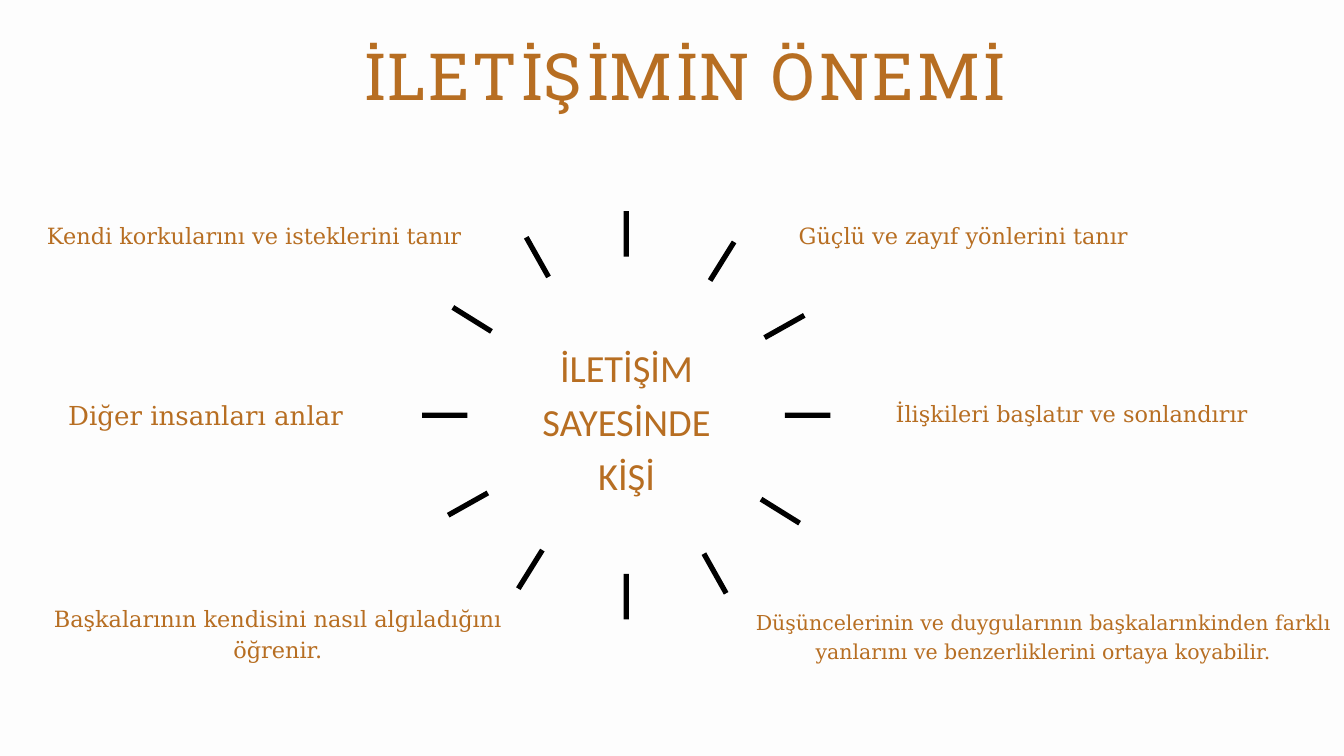
from dataclasses import dataclass
from itertools import product
from math import cos, radians, sin

from pptx import Presentation
from pptx.dml.color import RGBColor
from pptx.enum import shapes, text
from pptx.slide import Slide
from pptx.util import Cm, Pt

PAPER = RGBColor(0xFD, 0xFD, 0xFD)
COPPER = RGBColor(0xB7, 0x6E, 0x22)
BLACK = RGBColor(0x00, 0x00, 0x00)

# Ring of rays, in centimetres and degrees
CENTER_X, CENTER_Y, RADIUS = 23.67, 15.7, 6.86
RAY_LENGTH, RAY_THICKNESS = 1.72, 0.2
QUADRANTS = (0, 90, 180, 270)
RAY_ANGLES = (0, 31.9, 60.7)


@dataclass(frozen=True)
class Label:
    """A centred text; box in centimetres, sizes in points."""
    wording: str
    left: float
    top: float
    width: float
    height: float
    size: float = 24
    line_height: float = 33.6
    font: str = "DejaVu Serif"
    tracking: float = 0


TITLE = Label("İLETİŞİMİN ÖNEMİ", 11.63, 1.85, 28.45, 2.54,
              69.7, 69.7, "Roboto Slab", 2.9)
CORE = Label("İLETİŞİM SAYESİNDE KİŞİ", 19.38, 12.73, 8.61, 5.89,
             41.1, 57.6, "Calibri")
BENEFITS = (
    Label("Düşüncelerinin ve duygularının başkalarınkinden farklı yanlarını "
          "ve benzerliklerini ortaya koyabilir.",
          27.53, 22.91, 23.8, 2.16, 22, 30.8),
    Label("Kendi korkularını ve isteklerini tanır", 0.81, 8.23, 17.6, 1.17),
    Label("Güçlü ve zayıf yönlerini tanır", 19.53, 8.23, 33.76, 1.17),
    Label("İlişkileri başlatır ve sonlandırır", 33.07, 14.94, 14.88, 1.17),
    Label("Başkalarının kendisini nasıl algıladığını öğrenir.",
          0.81, 22.71, 19.38, 2.36),
    Label("Diğer insanları anlar", 1.98, 14.91, 11.58, 1.4, 28, 39.2),
)


def add_label(slide: Slide, label: Label) -> None:
    box = slide.shapes.add_textbox(Cm(label.left), Cm(label.top),
                                   Cm(label.width), Cm(label.height))
    frame = box.text_frame
    frame.word_wrap = True
    frame.auto_size = text.MSO_AUTO_SIZE.SHAPE_TO_FIT_TEXT
    frame.margin_left = frame.margin_right = Cm(0)
    frame.margin_top = frame.margin_bottom = Cm(0)
    paragraph = frame.paragraphs[0]
    paragraph.alignment = text.PP_ALIGN.CENTER
    paragraph.line_spacing = Pt(label.line_height)
    paragraph.font.name = label.font
    paragraph.font.size = Pt(label.size)
    paragraph.font.color.rgb = COPPER
    run = paragraph.add_run()
    run.text = label.wording
    if label.tracking:
        run._r.get_or_add_rPr().set("spc", str(round(label.tracking * 100)))


def add_ray(slide: Slide, angle: float) -> None:
    x = CENTER_X + RADIUS * cos(radians(angle))
    y = CENTER_Y + RADIUS * sin(radians(angle))
    ray = slide.shapes.add_shape(
        shapes.MSO_SHAPE.RECTANGLE,
        Cm(x - RAY_LENGTH / 2), Cm(y - RAY_THICKNESS / 2),
        Cm(RAY_LENGTH), Cm(RAY_THICKNESS))
    ray.rotation = angle
    ray.shadow.inherit = False
    ray.fill.solid()
    ray.fill.fore_color.rgb = BLACK
    ray.line.fill.background()


def main() -> None:
    deck = Presentation()
    deck.slide_width, deck.slide_height = Cm(50.8), Cm(28.58)
    slide = deck.slides.add_slide(deck.slide_layouts[6])
    slide.background.fill.solid()
    slide.background.fill.fore_color.rgb = PAPER

    # Title
    add_label(slide, TITLE)

    # Rays around the core message
    for quadrant, angle in product(QUADRANTS, RAY_ANGLES):
        add_ray(slide, quadrant + angle)
    add_label(slide, CORE)

    # What communication brings
    for benefit in BENEFITS:
        add_label(slide, benefit)

    deck.save("out.pptx")


if __name__ == "__main__":
    main()
